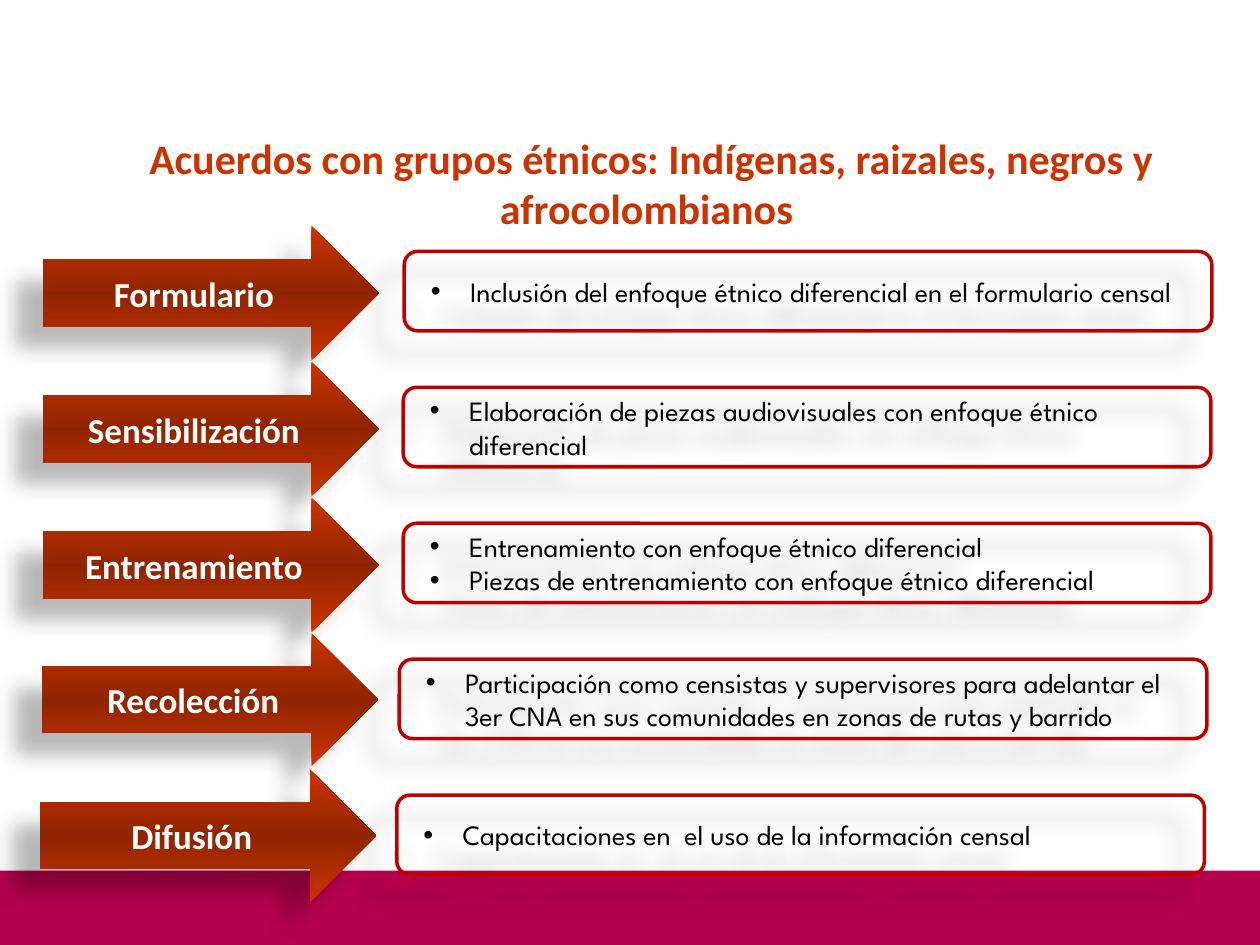
from pptx import Presentation
from pptx.dml.color import RGBColor
from pptx.enum.shapes import MSO_SHAPE
from pptx.enum.text import MSO_ANCHOR, MSO_AUTO_SIZE, PP_ALIGN
from pptx.oxml import parse_xml
from pptx.oxml.ns import nsdecls, qn
from pptx.util import Cm, Pt

TITLE = "Acuerdos con grupos étnicos: Indígenas, raizales, negros y afrocolombianos "
# arrow label, arrow left, arrow height, box left, box items (lengths in cm)
STAGES = [
    ("Formulario", 0.86, 2.72, 8.15,
     ["Inclusión del enfoque étnico diferencial en el formulario censal"]),
    ("Sensibilización", 0.86, 2.72, 8.13,
     ["Elaboración de piezas audiovisuales con enfoque étnico diferencial"]),
    ("Entrenamiento", 0.86, 2.72, 8.13,
     ["Entrenamiento con enfoque étnico diferencial",
      "Piezas de entrenamiento con enfoque étnico diferencial"]),
    ("Recolección", 0.84, 2.67, 8.05,
     ["Participación como censistas y supervisores para adelantar el "
      "3er CNA en sus comunidades en zonas de rutas y barrido"]),
    ("Difusión", 0.81, 2.67, 8.0,
     ["Capacitaciones en  el uso de la información censal"]),
]
FIRST_TOP, PITCH, BOX_DROP = 4.55, 2.74, 0.52


def rgb(color):
    return RGBColor.from_string(color)


def style(p, size, name, color, bold=False):
    for r in p.runs:
        r.font.size = Pt(size)
        r.font.name = name
        r.font.bold = bold
        r.font.color.rgb = rgb(color)


def add_shape(s, kind, left, top, width, height):
    sp = s.shapes.add_shape(kind, Cm(left), Cm(top), Cm(width), Cm(height))
    sp.shadow.inherit = False
    sp.line.fill.background()
    return sp


def cast_shadow(sp):
    """Soft shadow falling to the lower left."""
    effects = sp.element.spPr.find(qn("a:effectLst"))
    effects.append(parse_xml(
        f'<a:outerShdw {nsdecls("a")} blurRad="{Pt(11.8)}" dist="{Pt(19.7)}" '
        'dir="8460000" algn="tl" rotWithShape="0"><a:srgbClr val="000000">'
        '<a:alpha val="28000"/></a:srgbClr></a:outerShdw>'))


def shade_middle(sp, color):
    """Vertical gradient of one colour, darker half way."""
    sp.fill.gradient()
    sp.fill.gradient_angle = 270
    stops = sp.element.spPr.find(qn("a:gradFill")).find(qn("a:gsLst"))
    for stop in list(stops):
        stops.remove(stop)
    for pos, shade in ((0, 100000), (50000, 46275), (100000, 100000)):
        stops.append(parse_xml(
            f'<a:gs {nsdecls("a")} pos="{pos}"><a:srgbClr val="{color}">'
            f'<a:shade val="{shade}"/></a:srgbClr></a:gs>'))


def add_bullet(p):
    p.level = 1
    pPr = p._p.get_or_add_pPr()
    pPr.set("marL", str(Cm(1)))
    pPr.set("indent", str(Cm(-0.79)))
    pPr.append(parse_xml(f'<a:buFont {nsdecls("a")} typeface="Arial"/>'))
    pPr.append(parse_xml(f'<a:buChar {nsdecls("a")} char="•"/>'))


def add_title(s):
    tf = s.shapes.add_textbox(Cm(0.05), Cm(2.54), Cm(26.16), Cm(2.31)).text_frame
    tf.word_wrap = True
    tf.auto_size = MSO_AUTO_SIZE.SHAPE_TO_FIT_TEXT
    p = tf.paragraphs[0]
    p.text = TITLE
    p.alignment = PP_ALIGN.CENTER
    style(p, 24, "Calibri", "CC3300", bold=True)


def add_arrow(s, label, left, top, height):
    sp = add_shape(s, MSO_SHAPE.RIGHT_ARROW, left, top, 6.78, height)
    shade_middle(sp, "CC3300")
    cast_shadow(sp)
    tf = sp.text_frame
    tf.word_wrap = False
    tf.vertical_anchor = MSO_ANCHOR.MIDDLE
    p = tf.paragraphs[0]
    p.text = label
    p.alignment = PP_ALIGN.CENTER
    style(p, 20, "Calibri", "FFFFFF", bold=True)


def add_box(s, items, left, top):
    sp = add_shape(s, MSO_SHAPE.ROUNDED_RECTANGLE, left, top, 16.28, 1.6)
    sp.fill.background()
    sp.line.color.rgb = rgb("C00000")
    sp.line.width = Pt(2)
    cast_shadow(sp)
    tf = sp.text_frame
    tf.word_wrap = True
    tf.vertical_anchor = MSO_ANCHOR.MIDDLE
    tf.text = "\n".join(items)
    for p in tf.paragraphs:
        p.alignment = PP_ALIGN.LEFT
        add_bullet(p)
        style(p, 16, "League Spartan", "000000")


def main():
    prs = Presentation()
    prs.slide_width, prs.slide_height = Cm(25.4), Cm(19.05)
    s = prs.slides.add_slide(prs.slide_layouts[6])
    band = add_shape(s, MSO_SHAPE.RECTANGLE, 0, 17.55, 25.48, 1.57)
    band.fill.solid()
    band.fill.fore_color.rgb = rgb("B6014C")
    add_title(s)
    for i, (label, arrow_left, height, box_left, items) in enumerate(STAGES):
        top = FIRST_TOP + i * PITCH
        add_box(s, items, box_left, top + BOX_DROP)
        add_arrow(s, label, arrow_left, top, height)
    prs.save("out.pptx")


if __name__ == "__main__":
    main()
